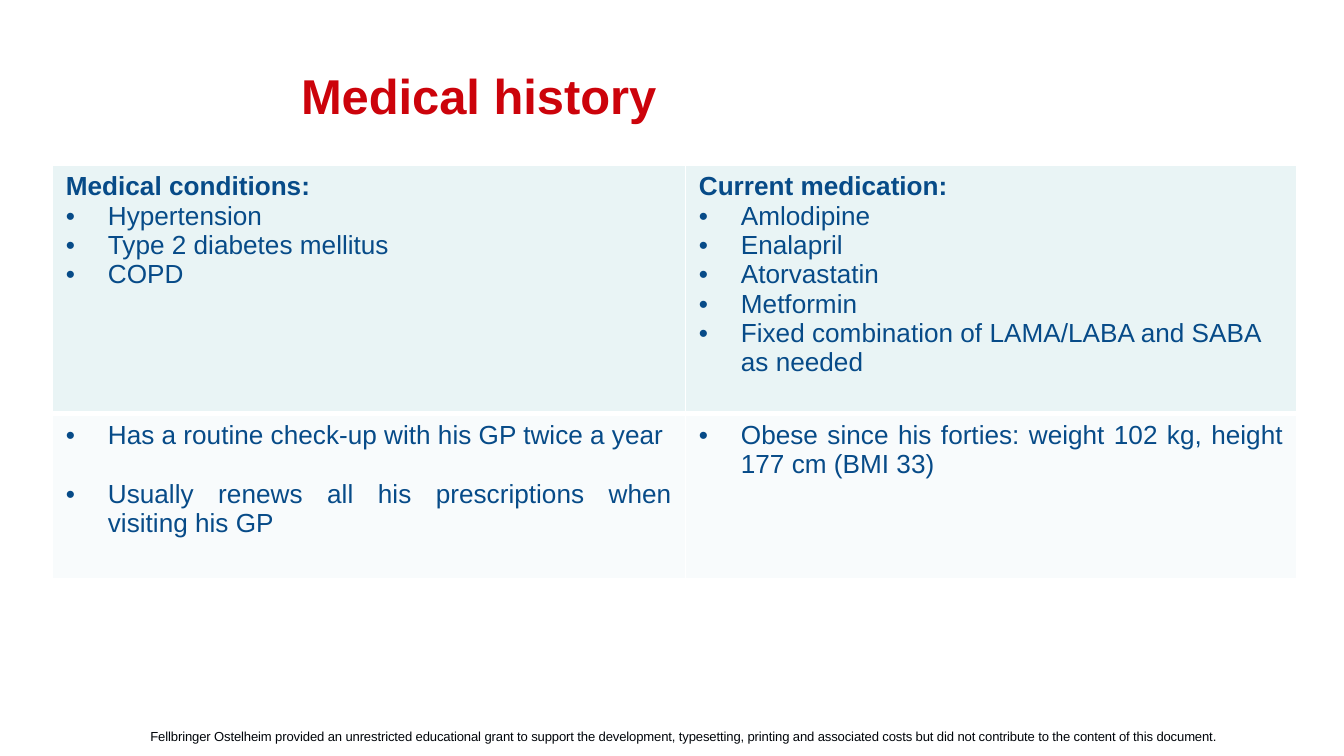
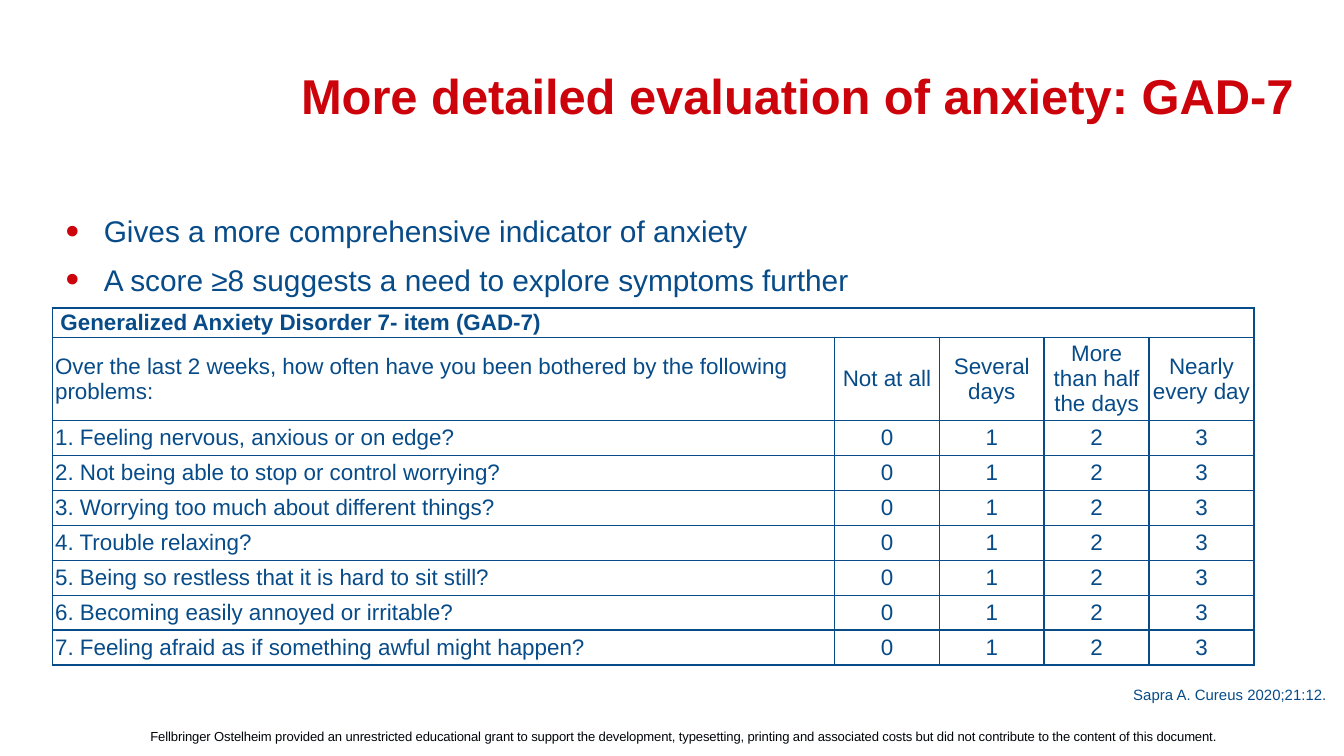
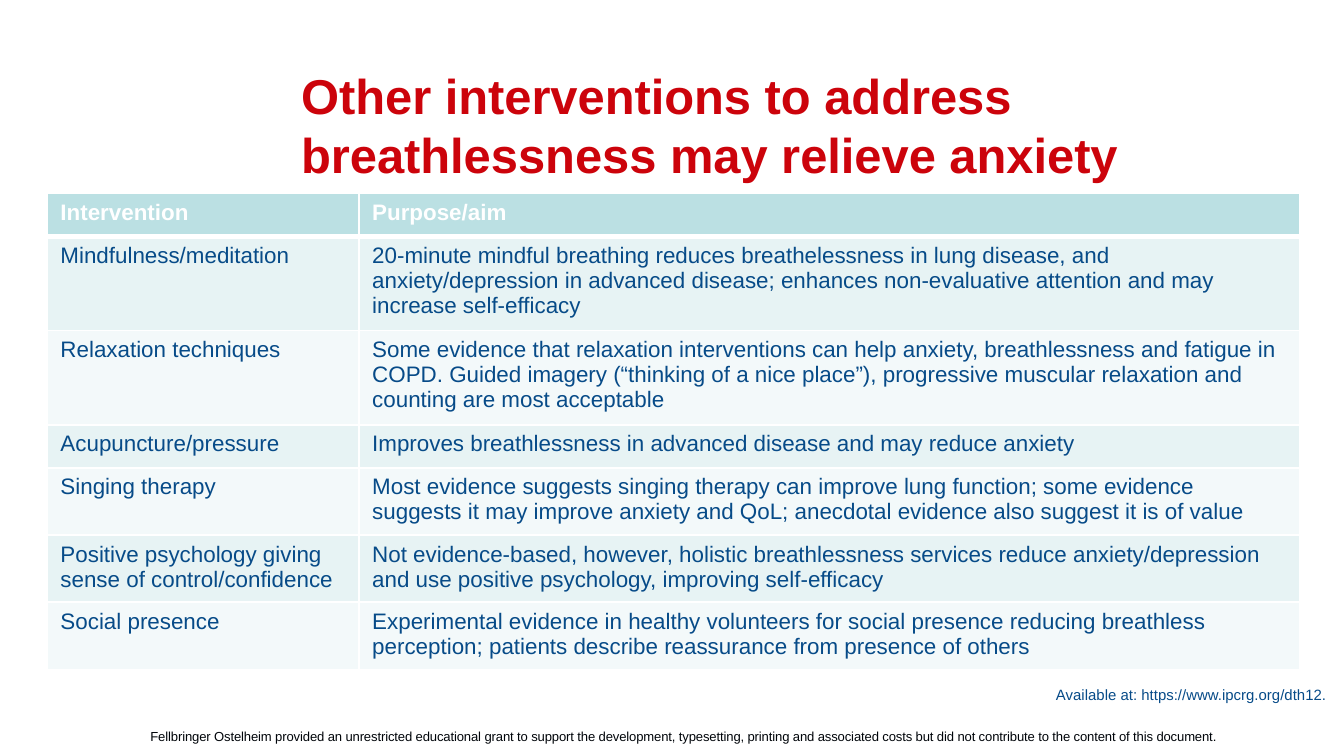
import pptx
import pptx.util
import pptx.dml.color
import pptx.enum.text
import pptx.oxml
import pptx.oxml.ns
from lxml import etree

Inches = pptx.util.Inches
Pt = pptx.util.Pt
RGBColor = pptx.dml.color.RGBColor
ALIGN = pptx.enum.text.PP_ALIGN
ANCHOR = pptx.enum.text.MSO_ANCHOR

RED = RGBColor(0xCC, 0x03, 0x0B)
BLUE = RGBColor(0x07, 0x4B, 0x88)
INK = RGBColor(0x00, 0x05, 0x0A)
WHITE = RGBColor(0xFF, 0xFF, 0xFF)
HEADER_TEAL = RGBColor(0xBB, 0xE0, 0xE3)
BANDS = [RGBColor(0xE7, 0xF3, 0xF4), RGBColor(0xF3, 0xF9, 0xFA)]
HISTORY_FILLS = [RGBColor(0xE9, 0xF4, 0xF5), RGBColor(0xF8, 0xFB, 0xFC)]
FONT = "Arial"

GRANT_NOTE = (
    "Fellbringer Ostelheim provided an unrestricted educational grant to support the "
    "development, typesetting, printing and associated costs but did not contribute to "
    "the content of this document."
)

HISTORY_TITLE = "Medical history"
HISTORY = [
    [
        ("Medical conditions:", ALIGN.JUSTIFY,
         ["Hypertension", "Type 2 diabetes mellitus", "COPD"]),
        ("Current medication:", ALIGN.LEFT,
         ["Amlodipine", "Enalapril", "Atorvastatin", "Metformin",
          "Fixed combination of LAMA/LABA and SABA as needed"]),
    ],
    [
        (None, ALIGN.JUSTIFY,
         ["Has a routine check-up with his GP twice a year",
          "Usually renews all his prescriptions when visiting his GP"]),
        (None, ALIGN.JUSTIFY,
         ["Obese since his forties: weight 102 kg, height 177 cm (BMI 33)"]),
    ],
]

ANXIETY_TITLE = "More detailed evaluation of anxiety: GAD-7"
ANXIETY_POINTS = [
    "Gives a more comprehensive indicator of anxiety",
    "A score ≥8 suggests a need to explore symptoms further",
]
GAD7_HEADING = "Generalized Anxiety Disorder 7- item (GAD-7)"
GAD7_QUESTION = (
    "Over the last 2 weeks, how often have you been bothered by the following problems:"
)
GAD7_ANSWERS = ["Not at all", "Several days", "More than half the days", "Nearly every day"]
GAD7_ITEMS = [
    "Feeling nervous, anxious or on edge?",
    "Not being able to stop or control worrying?",
    "Worrying too much about different things?",
    "Trouble relaxing?",
    "Being so restless that it is hard to sit still?",
    "Becoming easily annoyed or irritable?",
    "Feeling afraid as if something awful might happen?",
]
ANXIETY_SOURCE = "Sapra A. Cureus 2020;21:12."

INTERVENTIONS_TITLE = "Other interventions to address breathlessness may relieve anxiety"
INTERVENTIONS = [
    ("Intervention", "Purpose/aim"),
    ("Mindfulness/meditation",
     "20-minute mindful breathing reduces breathelessness in lung disease, and "
     "anxiety/depression in advanced disease; enhances non-evaluative attention and may "
     "increase self-efficacy"),
    ("Relaxation techniques",
     "Some evidence that relaxation interventions can help anxiety, breathlessness and "
     "fatigue in COPD. Guided imagery (“thinking of a nice place”), progressive muscular "
     "relaxation and counting are most acceptable"),
    ("Acupuncture/pressure",
     "Improves breathlessness in advanced disease and may reduce anxiety"),
    ("Singing therapy",
     "Most evidence suggests singing therapy can improve lung function; some evidence "
     "suggests it may improve anxiety and QoL; anecdotal evidence also suggest it is of value"),
    ("Positive psychology giving sense of control/confidence",
     "Not evidence-based, however, holistic breathlessness services reduce "
     "anxiety/depression and use positive psychology, improving self-efficacy"),
    ("Social presence",
     "Experimental evidence in healthy volunteers for social presence reducing breathless "
     "perception; patients describe reassurance from presence of others"),
]
INTERVENTIONS_SOURCE = "Available at: https://www.ipcrg.org/dth12."


def add_child(parent, tag, **attributes):
    child = etree.SubElement(parent, pptx.oxml.ns.qn(tag))
    for key, value in attributes.items():
        child.set(key, str(value))
    return child


def write(frame, text, size=12, color=BLUE, bold=False, align=ALIGN.LEFT, hang=None,
          bullet_color=None, bullet_size=None, before=0, line=None, tracking=None):
    paragraph = frame.paragraphs[0]
    if paragraph.runs:
        paragraph = frame.add_paragraph()
    if hang:
        properties = paragraph._p.get_or_add_pPr()
        properties.set("marL", str(Pt(hang)))
        properties.set("indent", str(-Pt(hang)))
        if bullet_color is not None:
            add_child(add_child(properties, "a:buClr"), "a:srgbClr", val=bullet_color)
        if bullet_size:
            add_child(properties, "a:buSzPct", val=bullet_size * 1000)
        add_child(properties, "a:buFont", typeface=FONT)
        add_child(properties, "a:buChar", char="•")
    paragraph.alignment = align
    if before:
        paragraph.space_before = Pt(before)
    if line:
        paragraph.line_spacing = line
    run = paragraph.add_run()
    run.text = text
    run.font.name = FONT
    run.font.size = Pt(size)
    run.font.bold = bold
    run.font.color.rgb = color
    if tracking:
        run._r.get_or_add_rPr().set("spc", str(round(tracking * 100)))


def add_text_area(slide, left, top, width, height):
    area = slide.shapes.add_textbox(Inches(left), Inches(top), Inches(width), Inches(height))
    area.text_frame.word_wrap = True
    return area.text_frame


def add_slide(deck, title, source=None):
    slide = deck.slides.add_slide(deck.slide_layouts[5])
    heading = slide.shapes.title
    heading.left, heading.top = Inches(2.14), Inches(0.44)
    heading.width, heading.height = Inches(7.86), Inches(0.62)
    heading.text_frame.auto_size = pptx.enum.text.MSO_AUTO_SIZE.NONE
    heading.text_frame.vertical_anchor = ANCHOR.TOP
    write(heading.text_frame, title, size=26.2, color=RED, bold=True)

    grant = add_text_area(slide, 1.11, 5.4, 8.16, 0.14)
    grant.margin_left = Inches(0.01)
    grant.margin_right = grant.margin_bottom = 0
    grant.margin_top = Inches(0.02)
    write(grant, GRANT_NOTE, size=7, color=INK, tracking=-0.05)
    if source:
        write(add_text_area(slide, 3.12, 5.05, 6.85, 0.24), source, size=8, align=ALIGN.RIGHT)
    return slide


def add_grid(slide, left, top, widths, heights):
    grid = slide.shapes.add_table(
        len(heights), len(widths), Inches(left), Inches(top),
        Inches(sum(widths)), Inches(sum(heights))).table
    grid.first_row = grid.horz_banding = False
    for column, width in zip(grid.columns, widths):
        column.width = Inches(width)
    for row, height in zip(grid.rows, heights):
        row.height = Inches(height)
    return grid


def format_cell(cell, border, fill=None, top=1, bottom=1):
    if fill is None:
        cell.fill.background()
    else:
        cell.fill.solid()
        cell.fill.fore_color.rgb = fill
    properties = cell._tc.get_or_add_tcPr()
    edges = [("a:lnL", 1), ("a:lnR", 1), ("a:lnT", top), ("a:lnB", bottom)]
    for place, (tag, weight) in enumerate(edges):
        edge = add_child(properties, tag, w=Pt(weight))
        add_child(add_child(edge, "a:solidFill"), "a:srgbClr", val=border)
        properties.insert(place, edge)


def header_rule(row):
    return {"top": 3 if row == 1 else 1, "bottom": 3 if row == 0 else 1}


def build_history(deck):
    slide = add_slide(deck, HISTORY_TITLE)
    grid = add_grid(slide, 0.39, 1.23, [4.71, 4.55], [1.85, 1.23])
    for row, groups in enumerate(HISTORY):
        for column, (heading, align, points) in enumerate(groups):
            cell = grid.cell(row, column)
            format_cell(cell, WHITE, HISTORY_FILLS[row], **header_rule(row))
            if heading:
                write(cell.text_frame, heading, size=14, bold=True)
            for index, point in enumerate(points):
                gap = 0 if heading or index == 0 else 16
                write(cell.text_frame, point, size=14, align=align, hang=22.5, before=gap)


def build_anxiety(deck):
    slide = add_slide(deck, ANXIETY_TITLE, ANXIETY_SOURCE)
    points = add_text_area(slide, 0.39, 1.48, 8.5, 2.88)
    for index, point in enumerate(ANXIETY_POINTS):
        write(points, point, size=16, hang=20.5, bullet_color=RED, bullet_size=130,
              before=3.2 if index else 0, line=1.2)

    rows = [[GAD7_HEADING] + [""] * len(GAD7_ANSWERS), [GAD7_QUESTION] + GAD7_ANSWERS]
    for number, item in enumerate(GAD7_ITEMS, 1):
        scores = [str(score) for score in range(len(GAD7_ANSWERS))]
        rows.append([f"{number}. {item}"] + scores)
    grid = add_grid(slide, 0.39, 2.29, [5.82] + [0.78] * len(GAD7_ANSWERS),
                    [0.19, 0.53] + [0.26] * len(GAD7_ITEMS))
    grid.cell(0, 0).merge(grid.cell(0, len(GAD7_ANSWERS)))
    for row, texts in enumerate(rows):
        for column, text in enumerate(texts):
            cell = grid.cell(row, column)
            format_cell(cell, BLUE)
            cell.vertical_anchor = ANCHOR.MIDDLE
            cell.margin_left = Inches(0.02 if row else 0.06)
            cell.margin_right = Inches(0.02)
            cell.margin_top = cell.margin_bottom = Inches(0.01)
            if text:
                write(cell.text_frame, text, bold=row == 0,
                      align=ALIGN.CENTER if column else ALIGN.LEFT)


def build_interventions(deck):
    slide = add_slide(deck, INTERVENTIONS_TITLE, INTERVENTIONS_SOURCE)
    grid = add_grid(slide, 0.35, 1.44, [2.32, 7], [0.32, 0.4, 0.56, 0.32, 0.4, 0.4, 0.4])
    for row, texts in enumerate(INTERVENTIONS):
        fill = BANDS[(row - 1) % 2] if row else HEADER_TEAL
        for column, text in enumerate(texts):
            cell = grid.cell(row, column)
            format_cell(cell, WHITE, fill, **header_rule(row))
            write(cell.text_frame, text, bold=row == 0, color=BLUE if row else WHITE)


def main():
    deck = pptx.Presentation()
    deck.slide_width = Inches(10)
    deck.slide_height = deck.slide_width * 9 // 16
    build_history(deck)
    build_anxiety(deck)
    build_interventions(deck)
    deck.save("out.pptx")


if __name__ == "__main__":
    main()
